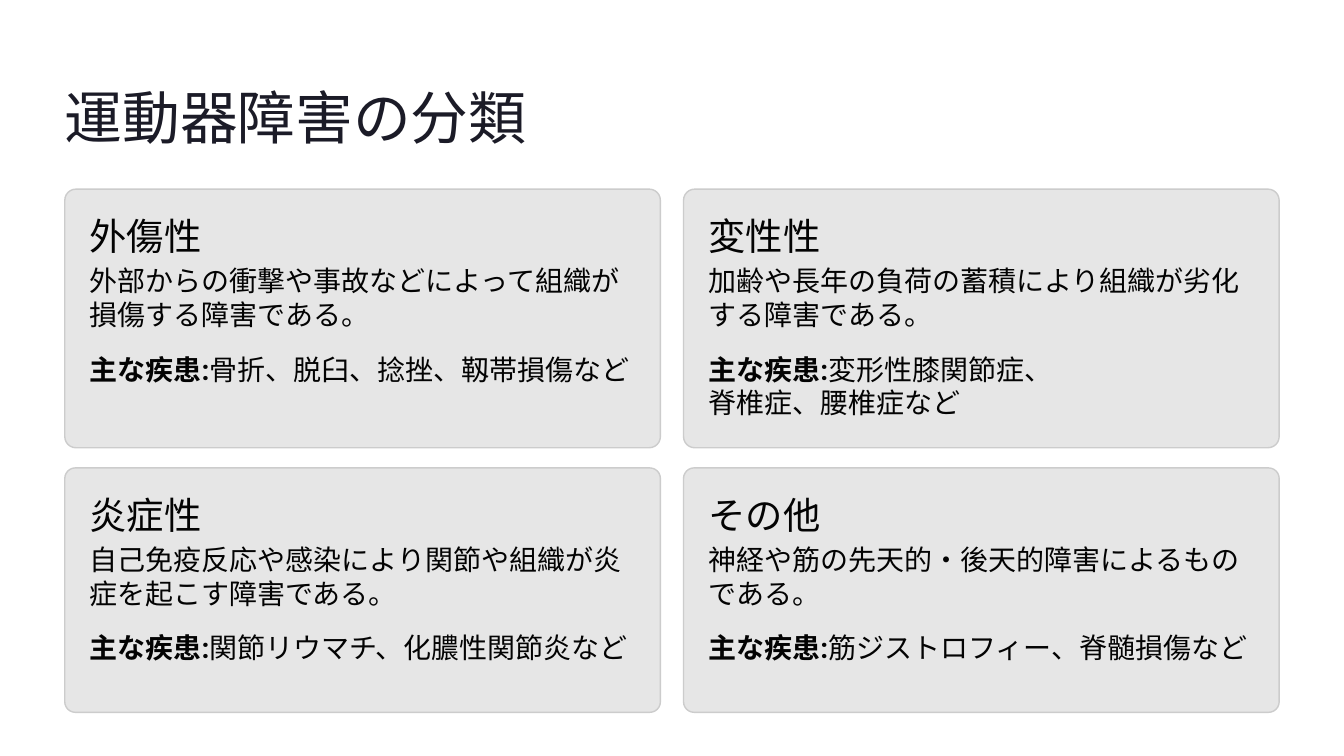
from dataclasses import dataclass

from pptx import Presentation
from pptx.dml.color import RGBColor
from pptx.enum.shapes import MSO_SHAPE as Preset
from pptx.util import Cm, Pt

# Content
HEADING = "運動器障害の分類"
DISEASES_LABEL = "主な疾患:"
CATEGORIES = [  # name, description lines, disease lines
    ("外傷性", ["外部からの衝撃や事故などによって組織が損傷する障害である。"],
     ["骨折、脱臼、捻挫、靱帯損傷など"]),
    ("変性性", ["加齢や長年の負荷の蓄積により組織が劣化する障害である。"],
     ["変形性膝関節症、", "脊椎症、腰椎症など"]),
    ("炎症性", ["自己免疫反応や感染により関節や組織が炎症を起こす障害である。"],
     ["関節リウマチ、化膿性関節炎など"]),
    ("その他", ["神経や筋の先天的・後天的障害によるもの", "である。"],
     ["筋ジストロフィー、脊髄損傷など"]),
]


@dataclass(frozen=True)
class Theme:
    heading_font: str = "Inter"
    body_font: str = "Roboto"
    heading_size: float = 49.5
    name_size: float = 32
    body_size: float = 24
    heading_color: str = "1B1B27"
    ink: str = "030303"
    card_fill: str = "E6E6E6"
    card_line: str = "CCCCCC"


THEME = Theme()

# Layout in centimetres
LEFT, TOP = 1.96, 5.72
CARD_WIDTH, COLUMN_GAP = 18.01, 0.7
ROW_HEIGHTS, ROW_GAP = (7.82, 7.39), 0.61
INSET = 0.75
NAME_DROP, DESCRIPTION_DROP, DISEASES_DROP = 0.74, 2.26, 4.93

deck = Presentation()
deck.slide_width, deck.slide_height = Cm(40.64), Cm(22.86)
slide = deck.slides.add_slide(deck.slide_layouts[6])


def add_text(lines, x, y, width, height, *, size=THEME.body_size,
             font=THEME.body_font, color=THEME.ink, label="", wrap=False,
             line_spacing=None):
    """Write one paragraph per line; a label opens the first one in bold."""
    box = slide.shapes.add_textbox(Cm(x), Cm(y), Cm(width), Cm(height))
    frame = box.text_frame
    frame.word_wrap = wrap
    frame.margin_left = frame.margin_right = 0
    frame.margin_top = frame.margin_bottom = 0
    for index, line in enumerate(lines):
        paragraph = frame.add_paragraph() if index else frame.paragraphs[0]
        paragraph.line_spacing = line_spacing
        pieces = [(line, False)]
        if label and index == 0:
            pieces.insert(0, (label, True))
        for words, bold in pieces:
            run = paragraph.add_run()
            run.text = words
            run.font.name, run.font.size, run.font.bold = font, Pt(size), bold
            run.font.color.rgb = RGBColor.from_string(color)


def add_card(x, y, height):
    card = slide.shapes.add_shape(Preset.ROUNDED_RECTANGLE, Cm(x), Cm(y),
                                  Cm(CARD_WIDTH), Cm(height))
    card.adjustments[0] = 0.043
    card.shadow.inherit = False
    card.fill.solid()
    card.fill.fore_color.rgb = RGBColor.from_string(THEME.card_fill)
    card.line.color.rgb = RGBColor.from_string(THEME.card_line)
    card.line.width = Pt(1.2)


# Heading
add_text([HEADING], LEFT, 2.39, 17.55, 2.18, size=THEME.heading_size,
         font=THEME.heading_font, color=THEME.heading_color,
         line_spacing=Pt(62))

# Category cards, two per row
for position, (name, description, diseases) in enumerate(CATEGORIES):
    row, column = divmod(position, 2)
    x = LEFT + column * (CARD_WIDTH + COLUMN_GAP)
    y = TOP + sum(ROW_HEIGHTS[:row]) + row * ROW_GAP
    text_x, text_width = x + INSET, CARD_WIDTH - 2 * INSET
    add_card(x, y, ROW_HEIGHTS[row])
    add_text([name], text_x, y + NAME_DROP, 8.76, 1.27,
             size=THEME.name_size, font=THEME.heading_font)
    add_text(description, text_x, y + DESCRIPTION_DROP, text_width, 2.59,
             wrap=len(description) == 1)
    add_text(diseases, text_x, y + DISEASES_DROP, text_width, 1.3,
             label=DISEASES_LABEL)

deck.save("out.pptx")
